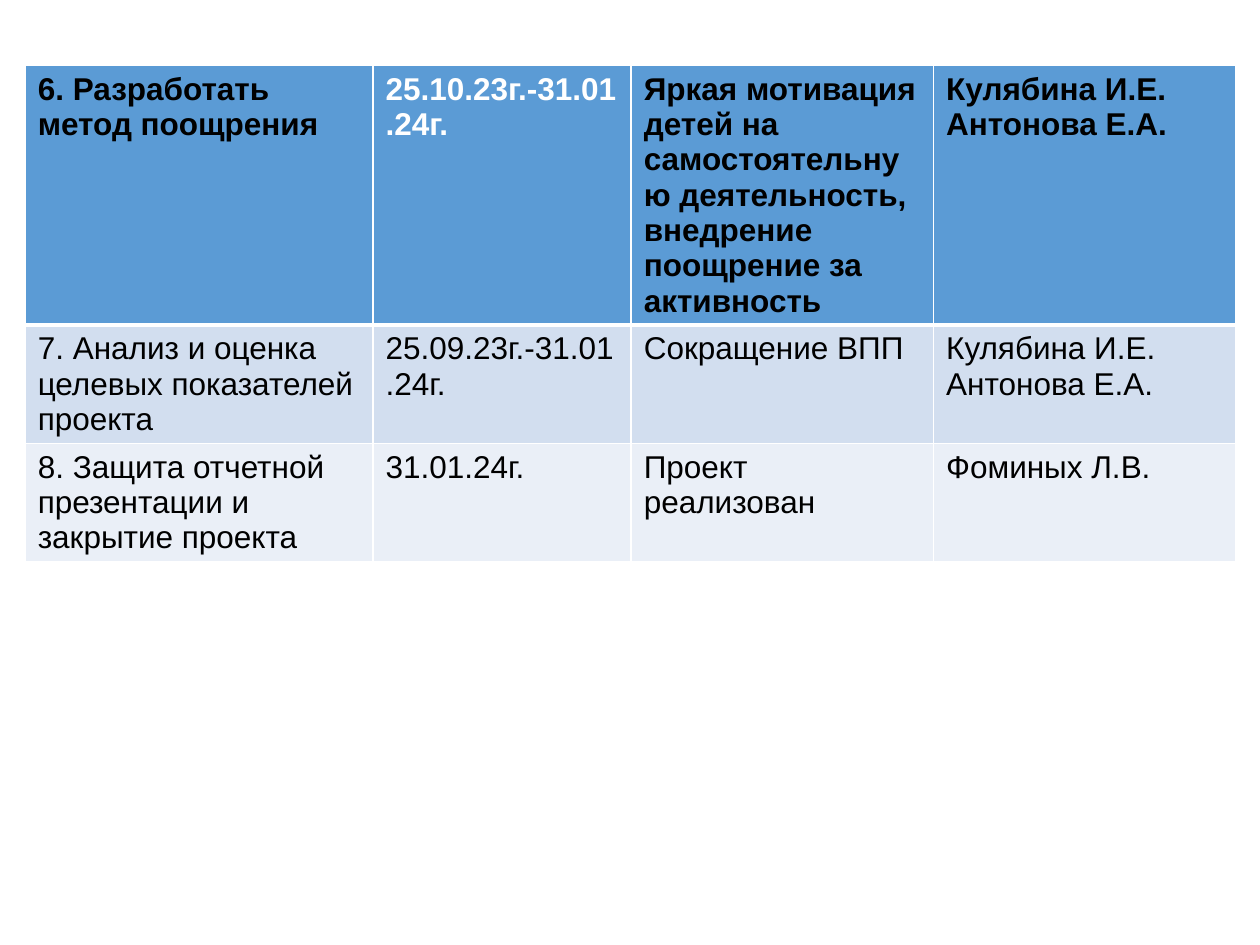
"""Build a slide with the closing stages of a project plan in a table."""
from lxml import etree
from pptx import Presentation
from pptx.dml.color import RGBColor
from pptx.enum.text import PP_ALIGN
from pptx.oxml.ns import qn
from pptx.util import Pt

LEFT_ALIGN = PP_ALIGN.LEFT
BLACK = RGBColor(0x00, 0x00, 0x00)
WHITE = RGBColor(0xFF, 0xFF, 0xFF)
ROW_FILLS = [
    RGBColor(0x5B, 0x9B, 0xD5),
    RGBColor(0xD2, 0xDE, 0xEF),
    RGBColor(0xEA, 0xEF, 0xF7),
]
FONT = "Arial"
FONT_SIZE = 18
LEFT, TOP = 14.4, 37.44
COLUMN_WIDTHS = [198.72, 147.6, 172.8, 172.8]
ROW_HEIGHT = 53.28
THIN, THICK = 1, 3

TEAM = ["Кулябина И.Е.", "Антонова Е.А."]
STAGES = [
    [
        ["6. Разработать метод поощрения"],
        ["25.10.23г.-31.01.24г."],
        ["Яркая мотивация детей на самостоятельную деятельность, "
         "внедрение поощрение за активность"],
        TEAM,
    ],
    [
        ["7. Анализ и оценка целевых показателей проекта"],
        ["25.09.23г.-31.01.24г."],
        ["Сокращение ВПП"],
        TEAM,
    ],
    [
        ["8. Защита отчетной презентации и закрытие проекта"],
        ["31.01.24г."],
        ["Проект реализован"],
        ["Фоминых Л.В."],
    ],
]


def add_borders(cell, top, bottom):
    properties = cell._tc.get_or_add_tcPr()
    widths = {"a:lnL": THIN, "a:lnR": THIN, "a:lnT": top, "a:lnB": bottom}
    for tag, width in widths.items():
        line = etree.SubElement(properties, qn(tag), w=str(Pt(width)))
        fill = etree.SubElement(line, qn("a:solidFill"))
        etree.SubElement(fill, qn("a:srgbClr"), val=str(WHITE))


def write_cell(cell, lines, color, bold):
    frame = cell.text_frame
    for index, line in enumerate(lines):
        para = frame.add_paragraph() if index else frame.paragraphs[0]
        para.alignment = LEFT_ALIGN
        span = para.add_run()
        span.text = line
        span.font.name = FONT
        span.font.size = Pt(FONT_SIZE)
        span.font.bold = bold
        span.font.color.rgb = color


def add_stage_table(page):
    table = page.shapes.add_table(
        len(STAGES), len(COLUMN_WIDTHS), Pt(LEFT), Pt(TOP),
        Pt(sum(COLUMN_WIDTHS)), Pt(ROW_HEIGHT * len(STAGES)),
    ).table
    for column, width in zip(table.columns, COLUMN_WIDTHS):
        column.width = Pt(width)
    for row_index, stage in enumerate(STAGES):
        table.rows[row_index].height = Pt(ROW_HEIGHT)
        is_header = row_index == 0
        for column_index, lines in enumerate(stage):
            cell = table.cell(row_index, column_index)
            add_borders(
                cell,
                THICK if row_index == 1 else THIN,
                THICK if is_header else THIN,
            )
            cell.fill.solid()
            cell.fill.fore_color.rgb = ROW_FILLS[row_index]
            color = WHITE if is_header and column_index == 1 else BLACK
            write_cell(cell, lines, color, is_header)


def main():
    deck = Presentation()
    deck.slide_width, deck.slide_height = Pt(720), Pt(540)
    page = deck.slides.add_slide(deck.slide_layouts[6])
    add_stage_table(page)
    deck.save("out.pptx")


if __name__ == "__main__":
    main()
